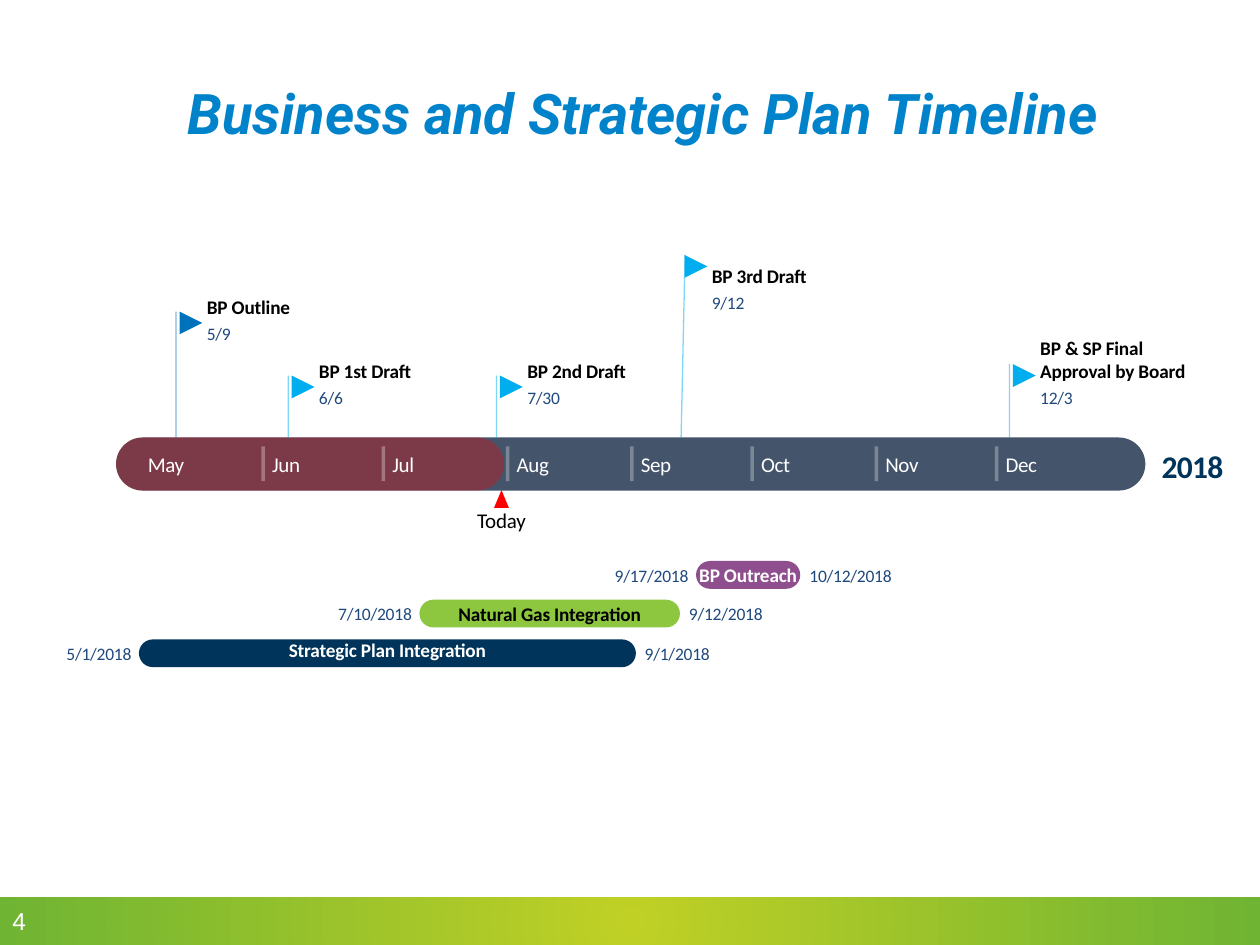
"""Build the business and strategic plan timeline slide."""
import itertools

import lxml.etree
import pptx
import pptx.dml.color
import pptx.enum.shapes
import pptx.enum.text
import pptx.oxml
import pptx.oxml.ns
import pptx.util

Cm = pptx.util.Cm
SHAPE = pptx.enum.shapes.MSO_SHAPE
LEFT = pptx.enum.text.PP_ALIGN.LEFT
CENTER = pptx.enum.text.PP_ALIGN.CENTER
MIDDLE = pptx.enum.text.MSO_ANCHOR.MIDDLE
qn = pptx.oxml.ns.qn

MONTHS = ["May", "Jun", "Jul", "Aug", "Sep", "Oct", "Nov", "Dec"]
MONTH_STARTS = [0, *itertools.accumulate([31, 30, 31, 31, 30, 31, 30])]
MAY_FIRST, DAY_WIDTH = 2.8, 0.0808
BAND_LEFT, BAND_TOP, BAND_HEIGHT = 2.34, 8.82, 1.07
BLUE, SKY, NAVY = "0072BC", "00AEEF", "00345B"
DATE_BLUE, WHITE, BLACK = "1F497E", "FFFFFF", "000000"

MILESTONES = [
    ("BP Outline", "5/9", 3.55, 0, 6.28, 5.95, (1.8, 0.48), 0.6, BLUE),
    ("BP 1st Draft", "6/6", 5.81, 0, 7.57, 7.24, (2.1, 0.48), 0.6, SKY),
    ("BP 2nd Draft", "7/30", 10.01, 0, 7.57, 7.24, (2.2, 0.48), 0.8, SKY),
    ("BP 3rd Draft", "9/12", 13.73, 0.08, 5.14, 5.33, (2.1, 0.48), 0.8, SKY),
    ("BP & SP Final Approval by Board", "12/3", 20.35, 0, 7.34, 6.78,
     (3, 0.94), 0.8, SKY),
]
TASKS = [
    ("BP Outreach", "9/17/2018", "10/12/2018", 11.31, 11.35, 2.1, "8F4F8E", WHITE),
    ("Natural Gas Integration", "7/10/2018", "9/12/2018", 12.09, 12.14, 3.9,
     "8DC63F", BLACK),
    ("Strategic Plan Integration", "5/1/2018", "9/1/2018", 12.89, 12.87, 4.2,
     NAVY, WHITE),
]
DATE_WIDTHS = {8: 1.37, 9: 1.55, 10: 1.73}


def rgb(hex_colour):
    """Return the colour for a hex string."""
    return pptx.dml.color.RGBColor.from_string(hex_colour)


def paint(fill, element, colour, opacity=100):
    """Give a fill a solid colour, optionally translucent."""
    fill.solid()
    fill.fore_color.rgb = rgb(colour)
    if opacity < 100:
        srgb = next(element.iter(qn("a:srgbClr")))
        lxml.etree.SubElement(srgb, qn("a:alpha")).set("val", str(opacity * 1000))


def write(frame, text, size=12, font="Calibri", colour=BLACK, bold=False,
          italic=False, align=LEFT, spacing=0):
    """Put one formatted paragraph into a text frame."""
    paragraph = frame.paragraphs[0]
    paragraph.alignment = align
    run = paragraph.add_run()
    run.text = text
    run.font.size = pptx.util.Pt(size)
    run.font.name = font
    run.font.bold = bold
    run.font.italic = italic
    run.font.color.rgb = rgb(colour)
    if spacing:
        run.font._element.set("spc", str(spacing))


def add_label(slide, text, left, top, width, height, wrap=False, **text_format):
    """Add a text box without margins."""
    frame = slide.shapes.add_textbox(Cm(left), Cm(top), Cm(width), Cm(height)).text_frame
    frame.margin_left = frame.margin_right = frame.margin_top = frame.margin_bottom = 0
    frame.vertical_anchor = MIDDLE
    frame.word_wrap = wrap
    write(frame, text, **text_format)


def add_block(slide, kind, left, top, width, height, colour, opacity=100):
    """Add a filled shape without outline; rounded ones become pills."""
    block = slide.shapes.add_shape(kind, Cm(left), Cm(top), Cm(width), Cm(height))
    block.shadow.inherit = False
    block.line.fill.background()
    paint(block.fill, block._element.spPr, colour, opacity)
    if kind == SHAPE.ROUNDED_RECTANGLE:
        block.adjustments[0] = 0.5
    return block


def add_line(slide, start, end, colour, width, opacity):
    """Add a translucent straight line between two points."""
    line = slide.shapes.add_connector(
        pptx.enum.shapes.MSO_CONNECTOR.STRAIGHT, *map(Cm, start + end))
    line.line.width = pptx.util.Pt(width)
    paint(line.line.fill, line._element.spPr, colour, opacity)
    lxml.etree.SubElement(line._element.spPr, qn("a:effectLst"))


def day_position(date, days_after=0):
    """Return the horizontal place of a month/day date on the timeline."""
    month, day = map(int, date.split("/")[:2])
    return MAY_FIRST + (MONTH_STARTS[month - 5] + day - 1 + days_after) * DAY_WIDTH


def add_footer(slide):
    """Add the radial green footer band and the page number."""
    band = add_block(slide, SHAPE.RECTANGLE, 0, 18.09, 25.42, 0.97, WHITE)
    band.fill.gradient()
    for stop, colour in zip(band.fill.gradient_stops, ["C0D025", "6FB433"]):
        stop.color.rgb = rgb(colour)
    linear = next(band._element.iter(qn("a:lin")))
    radial = pptx.oxml.parse_xml(
        '<a:path xmlns:a="http://schemas.openxmlformats.org/drawingml/2006/main" '
        'path="circle"><a:fillToRect l="50000" t="50000" r="50000" b="50000"/></a:path>')
    linear.getparent().replace(linear, radial)
    number = slide.shapes.add_textbox(Cm(0), Cm(18.14), Cm(1.63), Cm(0.86))
    number.text_frame.word_wrap = True
    write(number.text_frame, "4", size=14, font="Arial", colour=WHITE)


def add_title(slide):
    """Place and format the slide title."""
    title = slide.shapes.title
    title.left, title.top, title.width, title.height = map(Cm, (1.27, 1.12, 23.39, 2.29))
    title.text_frame.vertical_anchor = MIDDLE
    write(title.text_frame, "Business and Strategic Plan Timeline", size=32,
          font="Roboto", colour="0083CA", bold=True, italic=True, align=CENTER)


def add_month_band(slide):
    """Add the year band with its elapsed part, today marker and months."""
    for width, colour, opacity in ((20.75, "44546A", 100), (7.82, "FF0000", 30)):
        add_block(slide, SHAPE.ROUNDED_RECTANGLE, BAND_LEFT, BAND_TOP, width,
                  BAND_HEIGHT, colour, opacity)
    add_label(slide, "2018", 23.24, 8.99, 1.6, 0.79, size=18, colour=NAVY,
              bold=True, align=CENTER, spacing=-40)
    add_block(slide, SHAPE.ISOSCELES_TRIANGLE, 9.96, 9.88, 0.3, 0.36, "FF0000")
    add_label(slide, "Today", 9.51, 10.24, 1.2, 0.51, align=CENTER, spacing=-10)
    for month, start in zip(MONTHS, MONTH_STARTS):
        x = MAY_FIRST + start * DAY_WIDTH
        if start:
            add_line(slide, (x, 9), (x, 9.7), WHITE, 2, 30)
        add_label(slide, month, x + 0.18, 9.11, 1, 0.51, colour=WHITE, spacing=-20)


def add_milestone(slide, name, date, pole, lean, flag_top, label_top, label_size,
                  date_width, colour):
    """Add a flag on its pole with name and date."""
    add_line(slide, (pole + lean, flag_top), (pole, BAND_TOP), colour, 0.75, 50)
    flag = add_block(slide, SHAPE.FLOWCHART_MERGE, pole + 0.07, flag_top, 0.46, 0.46, colour)
    flag.rotation = 270
    label_left = pole + 0.62
    add_label(slide, name, label_left, label_top, *label_size,
              wrap=label_size[1] > 0.5, size=11, bold=True, spacing=-10)
    add_label(slide, date, label_left, label_top + label_size[1] + 0.07, date_width,
              0.43, size=10, colour=DATE_BLUE, spacing=-10)


def add_task(slide, name, start, end, top, name_top, name_width, colour, name_colour):
    """Add a task bar with its name and its dates on both sides."""
    left, right = day_position(start), day_position(end, 1)
    add_block(slide, SHAPE.ROUNDED_RECTANGLE, left, top, right - left, 0.56, colour)
    start_width = DATE_WIDTHS[len(start)]
    for date, x in ((start, left - 0.12 - start_width), (end, right + 0.15)):
        add_label(slide, date, x, top + 0.07, DATE_WIDTHS[len(date)], 0.43, size=10,
                  colour=DATE_BLUE, align=CENTER, spacing=-10)
    add_label(slide, name, (left + right - name_width) / 2, name_top, name_width, 0.48,
              size=11, colour=name_colour, bold=True, align=CENTER, spacing=-10)


def main():
    """Build and save the slide."""
    deck = pptx.Presentation()
    deck.slide_width, deck.slide_height = Cm(25.4), Cm(19.05)
    slide = deck.slides.add_slide(deck.slide_layouts[5])
    add_footer(slide)
    add_title(slide)
    add_month_band(slide)
    for milestone in MILESTONES:
        add_milestone(slide, *milestone)
    for task in TASKS:
        add_task(slide, *task)
    deck.save("out.pptx")


if __name__ == "__main__":
    main()
